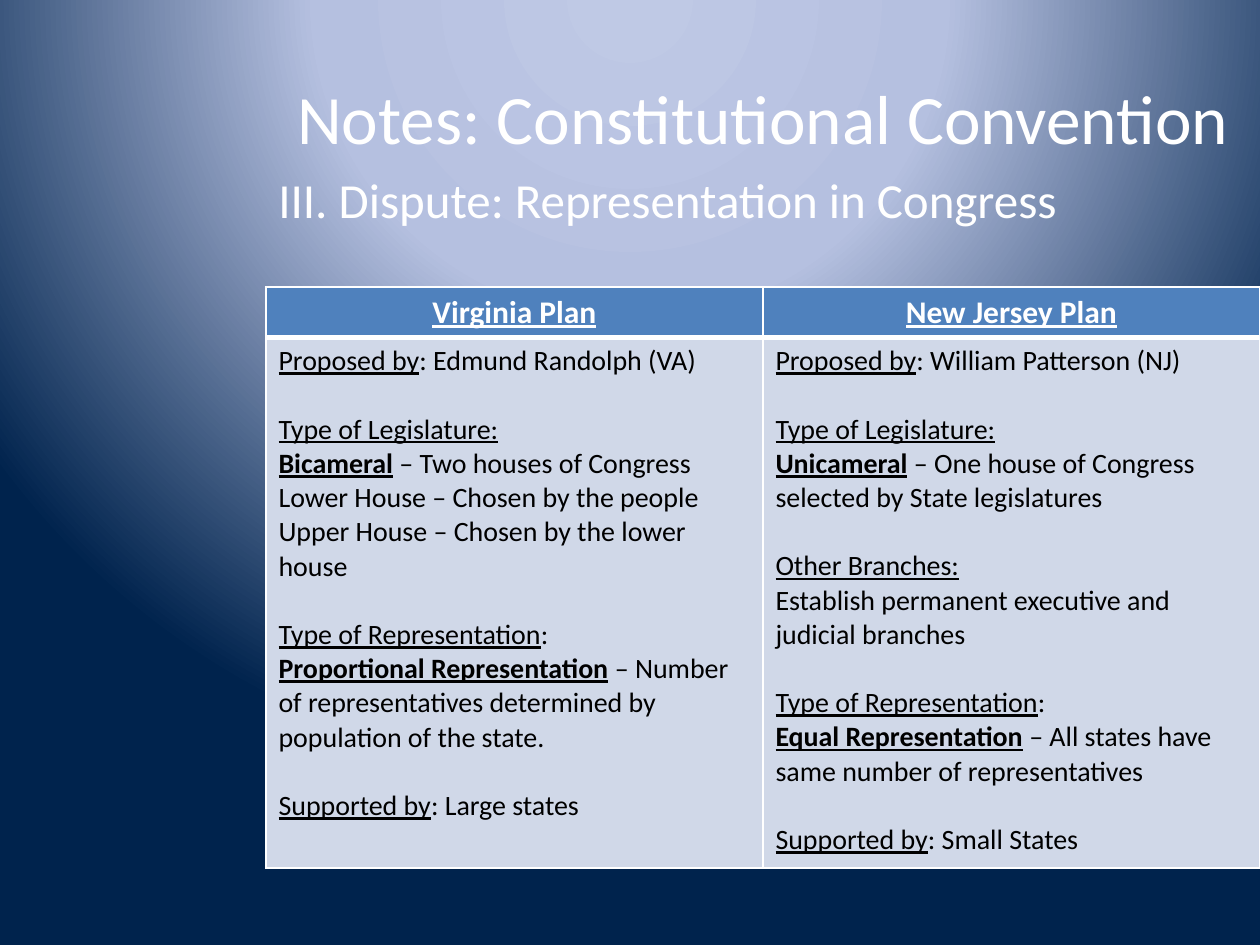
from lxml.etree import SubElement
from pptx import Presentation
from pptx.dml.color import RGBColor
from pptx.enum.text import MSO_ANCHOR, PP_ALIGN
from pptx.oxml import parse_xml
from pptx.oxml.ns import nsdecls, qn
from pptx.util import Pt

TITLE = "Notes: Constitutional Convention"
SUBTITLE = "III. Dispute: Representation in Congress"
HEADINGS = ["Virginia Plan", "New Jersey Plan"]

PLAIN, UNDER, STRONG = {}, {"underline": True}, {"bold": True, "underline": True}

PLANS = [
    [
        [[("Proposed by", UNDER), (": Edmund Randolph (VA)", PLAIN)]],
        [
            [("Type of Legislature:", UNDER)],
            [("Bicameral", STRONG), (" – Two houses of Congress", PLAIN)],
            [("Lower House – Chosen by the people", PLAIN)],
            [("Upper House – Chosen by the lower house", PLAIN)],
        ],
        [
            [("Type of Representation", UNDER), (":", PLAIN)],
            [("Proportional Representation", STRONG),
             (" – Number of representatives determined by population of the state.", PLAIN)],
        ],
        [[("Supported by", UNDER), (": Large states", PLAIN)]],
    ],
    [
        [[("Proposed by", UNDER), (": William Patterson (NJ)", PLAIN)]],
        [
            [("Type of Legislature:", UNDER)],
            [("Unicameral", STRONG),
             (" – One house of Congress selected by State legislatures", PLAIN)],
        ],
        [
            [("Other Branches:", UNDER)],
            [("Establish permanent executive and judicial branches", PLAIN)],
        ],
        [
            [("Type of Representation", UNDER), (":", PLAIN)],
            [("Equal Representation", STRONG),
             (" – All states have same number of representatives", PLAIN)],
        ],
        [[("Supported by", UNDER), (": Small States", PLAIN)]],
    ],
]

WHITE, BLACK, HEAD_FILL, BODY_FILL = "FFFFFF", "000000", "4F81BD", "D0D8E8"
BACKGROUND = [(0, "BFC9E5"), (40, "B5C0E0"), (100, "00234D")]
LEFT, WIDTH = 152, 568
TABLE_TOP, ROW_HEIGHTS = 164, [29, 303]
BLOCK_GAP = 19.5


def rgb(value):
    return RGBColor.from_string(value)


def add_span(para, text, size, color, style=PLAIN):
    span = para.add_run()
    span.text = text
    span.font.color.rgb = rgb(color)
    formats = {"name": "Calibri", "size": Pt(size), "bold": False, "underline": False}
    for name, value in {**formats, **style}.items():
        setattr(span.font, name, value)


def set_background(page):
    stops = "".join(
        f'<a:gs pos="{place * 1000}"><a:srgbClr val="{color}"/></a:gs>'
        for place, color in BACKGROUND
    )
    page.element.cSld.insert(0, parse_xml(
        f'<p:bg {nsdecls("p", "a")}><p:bgPr><a:gradFill rotWithShape="1">'
        f'<a:gsLst>{stops}</a:gsLst><a:path path="circle">'
        '<a:fillToRect l="50000" t="-80000" r="50000" b="180000"/></a:path>'
        '</a:gradFill><a:effectLst/></p:bgPr></p:bg>'
    ))


def style_cell(cell, fill, edges):
    properties = cell._tc.get_or_add_tcPr()
    for side, width in edges.items():
        line = SubElement(properties, qn(f"a:ln{side}"), w=str(Pt(width)))
        paint = SubElement(line, qn("a:solidFill"))
        SubElement(paint, qn("a:srgbClr"), val=WHITE)
    cell.fill.solid()
    cell.fill.fore_color.rgb = rgb(fill)


def fill_body(frame, blocks):
    para = frame.paragraphs[0]
    for block_index, block in enumerate(blocks):
        for line_index, spans in enumerate(block):
            if block_index or line_index:
                para = frame.add_paragraph()
            if block_index and not line_index:
                para.space_before = Pt(BLOCK_GAP)
            for text, style in spans:
                add_span(para, text, 16, BLACK, style)


def add_plans(page):
    table = page.shapes.add_table(
        2, len(PLANS), Pt(LEFT), Pt(TABLE_TOP), Pt(WIDTH), Pt(sum(ROW_HEIGHTS))
    ).table
    for row, height in zip(table.rows, ROW_HEIGHTS):
        row.height = Pt(height)
    for index, (heading, blocks) in enumerate(zip(HEADINGS, PLANS)):
        table.columns[index].width = Pt(WIDTH / len(PLANS))
        head, body = table.cell(0, index), table.cell(1, index)
        style_cell(head, HEAD_FILL, {"L": 1, "R": 1, "T": 1, "B": 3})
        style_cell(body, BODY_FILL, {"L": 1, "R": 1, "T": 3, "B": 1})
        para = head.text_frame.paragraphs[0]
        para.alignment = PP_ALIGN.CENTER
        add_span(para, heading, 18, WHITE, STRONG)
        fill_body(body.text_frame, blocks)


def place(box, top, height):
    box.left, box.top, box.width, box.height = Pt(LEFT), Pt(top), Pt(WIDTH), Pt(height)


def main():
    deck = Presentation()
    deck.slide_width, deck.slide_height = Pt(720), Pt(540)
    page = deck.slides.add_slide(deck.slide_layouts[5])
    set_background(page)

    title = page.shapes.title
    place(title, 21.6, 90)
    title.text_frame.vertical_anchor = MSO_ANCHOR.MIDDLE
    para = title.text_frame.paragraphs[0]
    para.alignment = PP_ALIGN.CENTER
    add_span(para, TITLE, 39.6, WHITE)

    subtitle = page.shapes.add_textbox(0, 0, 0, 0)
    place(subtitle, 93.6, 45)
    subtitle.text_frame.word_wrap = True
    add_span(subtitle.text_frame.paragraphs[0], SUBTITLE, 28, WHITE)

    add_plans(page)
    deck.save("out.pptx")


if __name__ == "__main__":
    main()
